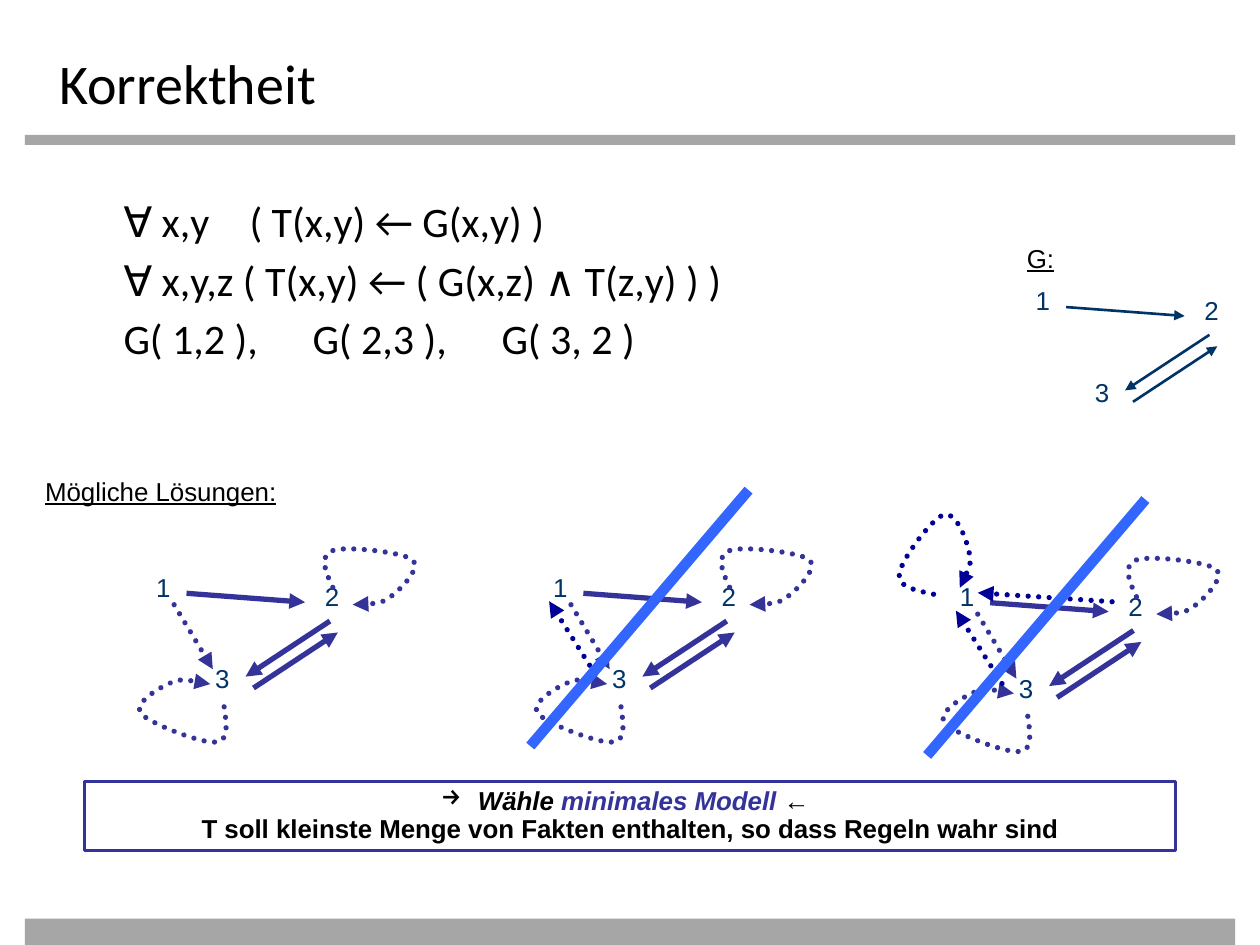
"""Build the slide on minimal models of a transitive closure."""
from dataclasses import dataclass

from lxml import etree
from pptx import Presentation
from pptx.dml.color import RGBColor
from pptx.enum.dml import MSO_LINE
from pptx.enum.shapes import MSO_CONNECTOR, MSO_SHAPE
from pptx.enum.text import MSO_ANCHOR, MSO_AUTO_SIZE, PP_ALIGN
from pptx.oxml.ns import qn
from pptx.util import Cm, Pt

BLACK = RGBColor(0x00, 0x00, 0x00)
GREY = RGBColor(0xA6, 0xA6, 0xA6)
TEAL = RGBColor(0x00, 0x33, 0x66)
INDIGO = RGBColor(0x33, 0x33, 0x99)
NAVY = RGBColor(0x00, 0x00, 0x99)
BLUE = RGBColor(0x33, 0x66, 0xFF)
DOTS = MSO_LINE.ROUND_DOT
STRAIGHT = MSO_CONNECTOR.STRAIGHT
RECT = MSO_SHAPE.RECTANGLE
TOP = MSO_ANCHOR.TOP
FIT = MSO_AUTO_SIZE.SHAPE_TO_FIT_TEXT
LEFT, CENTER = PP_ALIGN.LEFT, PP_ALIGN.CENTER

NODES = (("1", 2.9, 11.46), ("2", 6.3, 11.66), ("3", 4.09, 13.31))
FACTS = (
    ((3.76, 11.96), (6.15, 12.14)),
    ((6.65, 12.52), (4.95, 13.64)),
    ((5.11, 13.87), (6.81, 12.75)),
)
EDGE_13 = ((3.51, 12.19), (4.29, 13.49))
EDGE_31 = ((4.0, 13.59), (3.07, 12.12))
EDGE_21 = ((6.22, 11.94), (3.51, 11.76))
STRIKE = ((2.69, 15.04), (7.09, 9.88))
LOOP_1 = (
    (2.62, 11.79), (2.24, 11.71), (1.88, 11.63), (1.93, 11.38), (1.96, 11.1),
    (2.59, 10.26), (2.82, 10.19), (3.07, 10.11), (3.28, 10.67), (3.33, 10.92),
    (3.4, 11.15), (3.28, 11.4), (3.15, 11.66),
)
LOOP_2 = (
    (6.71, 11.84), (6.55, 11.51), (6.43, 11.2), (6.71, 11.1), (6.96, 11.0),
    (8.1, 11.13), (8.31, 11.28), (8.51, 11.43), (8.1, 11.86), (7.9, 12.01),
    (7.7, 12.17), (7.39, 12.19), (7.11, 12.19),
)
LOOP_3 = (
    (4.52, 14.25), (4.57, 14.61), (4.62, 14.96), (4.34, 14.96), (4.06, 14.99),
    (3.0, 14.58), (2.84, 14.38), (2.69, 14.17), (3.2, 13.87), (3.43, 13.77),
    (3.66, 13.67), (3.94, 13.74), (4.24, 13.79),
)
RULES = (
    ("∀ x,y\t( T(x,y) ← G(x,y) )", (2.35,)),
    ("∀ x,y,z ( T(x,y) ← ( G(x,z) ∧ T(z,y) ) )", ()),
    ("G( 1,2 ),\tG( 2,3 ),\tG( 3, 2 )", (3.08, 6.19)),
)


@dataclass(frozen=True)
class Graph:
    """Place and style of one graph, with its derived and superfluous edges."""
    dx: float
    dy: float
    color: RGBColor = INDIGO
    width: float = 3
    derived: tuple = (EDGE_13,)
    loops: tuple = (LOOP_2, LOOP_3)
    extra: tuple = ()
    extra_loops: tuple = ()


GRAPHS = (
    Graph(17.73, -5.77, TEAL, 1.5, derived=(), loops=()),
    Graph(0, 0),
    Graph(8, 0, extra=(EDGE_31,)),
    Graph(16.2, 0.19, extra=(EDGE_31, EDGE_21), extra_loops=(LOOP_1,)),
)


def add_run(p, text: str, *, size: float = 14.8, font: str = "Arial",
            color: RGBColor = BLACK, bold: bool = False, italic: bool = False,
            underline: bool = False) -> None:
    """Append a formatted run to a paragraph."""
    r = p.add_run()
    r.text = text
    f = r.font
    f.name, f.size, f.color.rgb = font, Pt(size), color
    f.bold, f.italic, f.underline = bold, italic, underline


def add_label(s, text: str, x: float, y: float, w: float = 0.81, **fmt) -> None:
    """Add a one-line label."""
    tf = s.shapes.add_textbox(Cm(x), Cm(y), Cm(w), Cm(0.81)).text_frame
    tf.word_wrap = False
    tf.auto_size = FIT
    p = tf.paragraphs[0]
    p.line_spacing = 0.9
    add_run(p, text, **fmt)


def add_rect(s, x: float, y: float, w: float, h: float):
    """Add a rectangle without shadow."""
    sp = s.shapes.add_shape(RECT, Cm(x), Cm(y), Cm(w), Cm(h))
    sp.shadow.inherit = False
    return sp


def style_line(sp, color: RGBColor, width: float, dotted: bool, arrow: bool) -> None:
    """Format a line or curve and remove its shadow."""
    sp.line.color.rgb = color
    sp.line.width = Pt(width)
    pr = sp._element.spPr
    ln = pr.find(qn("a:ln"))
    if dotted:
        sp.line.dash_style = DOTS
        ln.set("cap", "rnd")
    if arrow:
        etree.SubElement(ln, qn("a:tailEnd"), type="triangle")
    etree.SubElement(pr, qn("a:effectLst"))


def add_line(s, ends: tuple, dx: float, dy: float, color: RGBColor,
             width: float, dotted: bool = False, arrow: bool = True) -> None:
    """Add a straight line moved by an offset."""
    (x1, y1), (x2, y2) = ends
    sp = s.shapes.add_connector(STRAIGHT, Cm(x1 + dx), Cm(y1 + dy), Cm(x2 + dx), Cm(y2 + dy))
    style_line(sp, color, width, dotted, arrow)


def add_loop(s, points: tuple, dx: float, dy: float, color: RGBColor, width: float) -> None:
    """Add a dotted loop of cubic curves moved by an offset."""
    start, *rest = [(Cm(x + dx), Cm(y + dy)) for x, y in points]
    fb = s.shapes.build_freeform(*start)
    fb.add_line_segments(rest, close=False)
    sp = fb.convert_to_shape()
    sp.fill.background()
    outline = sp._element.spPr.find(".//" + qn("a:path"))
    segments = outline.findall(qn("a:lnTo"))
    for i in range(0, len(segments), 3):
        curve = etree.SubElement(outline, qn("a:cubicBezTo"))
        for seg in segments[i:i + 3]:
            curve.append(seg[0])
            outline.remove(seg)
    style_line(sp, color, width, True, True)


def add_graph(s, g: Graph) -> None:
    """Draw the nodes and edges of a graph."""
    for name, x, y in NODES:
        add_label(s, name, x + g.dx, y + g.dy, color=TEAL)
    for ends in FACTS:
        add_line(s, ends, g.dx, g.dy, g.color, g.width)
    for edges, loops, color in ((g.derived, g.loops, g.color), (g.extra, g.extra_loops, NAVY)):
        for ends in edges:
            add_line(s, ends, g.dx, g.dy, color, g.width, dotted=True)
        for points in loops:
            add_loop(s, points, g.dx, g.dy, color, g.width)


def fill_placeholders(s) -> None:
    """Place and fill the title and the list of rules."""
    title, body = s.shapes.title, s.placeholders[1]
    title.left, title.top, title.width, title.height = Cm(0.94), Cm(0.74), Cm(23.44), Cm(1.32)
    tf = title.text_frame
    tf.vertical_anchor = TOP
    tf.margin_top = Cm(0.23)
    tf.paragraphs[0].alignment = LEFT
    add_run(tf.paragraphs[0], "Korrektheit", size=32, font="Calibri")

    body.left, body.top, body.width, body.height = Cm(0.97), Cm(3.81), Cm(23.44), Cm(12.75)
    tf = body.text_frame
    tf.margin_left = Cm(1.52)
    for i, (text, stops) in enumerate(RULES):
        p = tf.add_paragraph() if i else tf.paragraphs[0]
        p.space_before = Pt(4.8 if i else 0)
        pr = p._p.get_or_add_pPr()
        pr.set("marL", "0")
        pr.set("indent", "0")
        etree.SubElement(pr, qn("a:buNone"))
        if stops:
            tabs = etree.SubElement(pr, qn("a:tabLst"))
            for pos in stops:
                etree.SubElement(tabs, qn("a:tab"), pos=str(Cm(pos)), algn="l")
        add_run(p, text, size=24, font="Calibri")


def add_conclusion(s) -> None:
    """Add the framed conclusion."""
    sp = add_rect(s, 1.7, 15.75, 22, 1.4)
    sp.fill.background()
    sp.line.color.rgb = INDIGO
    sp.line.width = Pt(1.5)
    tf = sp.text_frame
    tf.word_wrap = True
    tf.auto_size = FIT
    first, second = tf.paragraphs[0], tf.add_paragraph()
    for p in (first, second):
        p.alignment = CENTER
        p.line_spacing = 0.9
    etree.SubElement(first._p.get_or_add_pPr(), qn("a:buChar"), char="→")
    add_run(first, " ", bold=True)
    add_run(first, "Wähle ", bold=True, italic=True)
    add_run(first, "minimales Modell ", color=INDIGO, bold=True, italic=True)
    add_run(first, "←", bold=True)
    add_run(second, "T soll kleinste Menge von Fakten enthalten, so dass Regeln wahr sind", bold=True)


def main() -> None:
    """Build and save the slide."""
    prs = Presentation()
    prs.slide_width, prs.slide_height = Cm(25.4), Cm(19.05)
    s = prs.slides.add_slide(prs.slide_layouts[1])
    for y, h in ((2.72, 0.2), (18.52, 0.53)):
        bar = add_rect(s, 0.5, y, 24.4, h)
        bar.fill.solid()
        bar.fill.fore_color.rgb = GREY
        bar.line.fill.background()
    fill_placeholders(s)
    add_label(s, "G:", 20.45, 4.83, 1.07, underline=True)
    add_label(s, "Mögliche Lösungen:", 0.66, 9.53, 5.23, underline=True)
    for g in GRAPHS:
        add_graph(s, g)
    add_conclusion(s)
    for dx, dy in ((8, 0), (16, 0.19)):
        add_line(s, STRIKE, dx, dy, BLUE, 6, arrow=False)
    prs.save("out.pptx")


if __name__ == "__main__":
    main()
